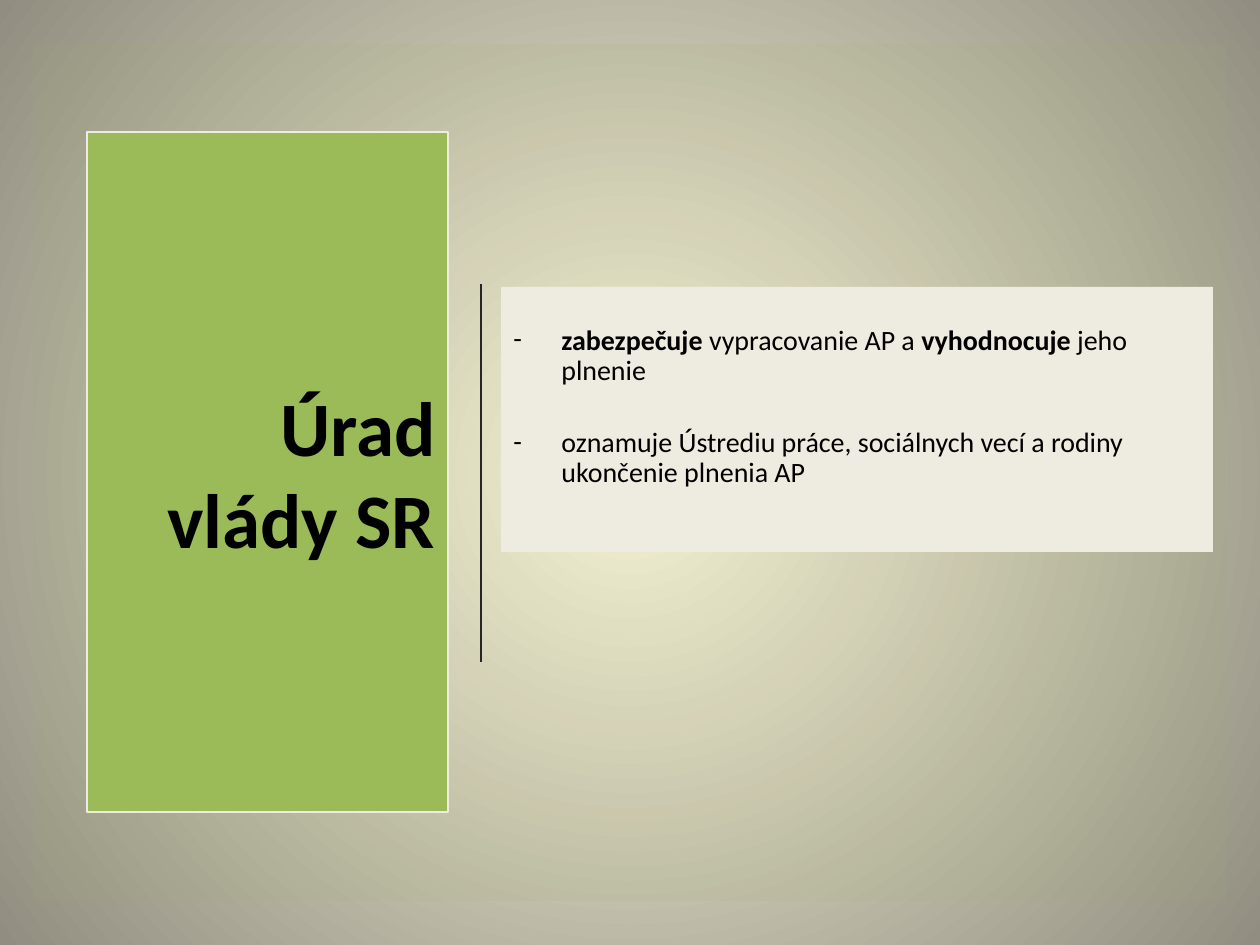
from lxml.etree import SubElement
from pptx import Presentation
from pptx.dml.color import RGBColor
from pptx.enum.shapes import MSO_CONNECTOR, MSO_SHAPE
from pptx.enum.text import MSO_ANCHOR, PP_ALIGN
from pptx.oxml.ns import qn
from pptx.util import Pt

SCALE = 914400 / 126
COLORS = {
    "center": "FCF7DD",
    "edge": "918E81",
    "green": "9BBB59",
    "cream": "EEECE1",
    "rule": "262626",
    "text": "000000",
}
DUTIES = [
    [("zabezpečuje ", True), ("vypracovanie AP a ", False),
     ("vyhodnocuje", True), (" jeho plnenie", False)],
    [("oznamuje Ústrediu práce, sociálnych vecí a rodiny ukončenie plnenia AP", False)],
]


def px(num):
    return round(num * SCALE)


def color(name):
    return RGBColor.from_string(COLORS[name])


def style(item, values):
    for name, value in values.items():
        setattr(item, name, value)


def add_glow(slide):
    fill = slide.background.fill
    fill.gradient()
    for stop, name, place in zip(fill.gradient_stops, ("center", "edge"), (0, 1)):
        stop.color.rgb = color(name)
        stop.position = place
    grad = slide.background._cSld.find(".//" + qn("a:gradFill"))
    grad.remove(grad.find(qn("a:lin")))
    shade = SubElement(grad, qn("a:path"), {"path": "circle"})
    SubElement(shade, qn("a:fillToRect"), dict.fromkeys("ltrb", "50000"))


def add_panel(slide, box, fill, line=None, alpha=None):
    shape = slide.shapes.add_shape(MSO_SHAPE.RECTANGLE, *map(px, box))
    shape.shadow.inherit = False
    shape.fill.solid()
    shape.fill.fore_color.rgb = color(fill)
    if alpha:
        tint = shape._element.spPr.find(".//" + qn("a:srgbClr"))
        SubElement(tint, qn("a:alpha"), {"val": str(alpha * 1000)})
    if line:
        shape.line.color.rgb = color(line)
        shape.line.width = Pt(0.75)
    else:
        shape.line.fill.background()
    return shape


def add_rule(slide, x, top, end):
    rule = slide.shapes.add_connector(
        MSO_CONNECTOR.STRAIGHT, px(x), px(top), px(x), px(end))
    rule.line.color.rgb = color("rule")
    rule.line.width = Pt(1.5)
    SubElement(rule._element.spPr, qn("a:effectLst"))


def add_run(para, text, size, bold):
    run = para.add_run()
    run.text = text
    style(run.font, {"name": "Calibri", "size": Pt(size), "bold": bold})
    run.font.color.rgb = color("text")


def add_title(shape, text):
    frame = shape.text_frame
    style(frame, {"word_wrap": True, "vertical_anchor": MSO_ANCHOR.MIDDLE})
    para = frame.paragraphs[0]
    para.alignment = PP_ALIGN.RIGHT
    add_run(para, text, 44, True)


def add_list(shape, items):
    frame = shape.text_frame
    style(frame, {"word_wrap": True, "vertical_anchor": MSO_ANCHOR.TOP,
                  "margin_top": px(39)})
    for index, runs in enumerate(items):
        para = frame.add_paragraph() if index else frame.paragraphs[0]
        style(para, {"alignment": PP_ALIGN.LEFT, "line_spacing": 0.9,
                     "space_before": Pt(24 if index else 0)})
        props = para._p.get_or_add_pPr()
        props.set("marL", str(px(48)))
        props.set("indent", str(px(-48)))
        SubElement(props, qn("a:buFont"), {"typeface": "Calibri"})
        SubElement(props, qn("a:buChar"), {"char": "-"})
        for text, bold in runs:
            add_run(para, text, 16, bold)


def main():
    deck = Presentation()
    style(deck, {"slide_width": px(1260), "slide_height": px(945)})
    slide = deck.slides.add_slide(deck.slide_layouts[6])
    add_glow(slide)
    add_panel(slide, (33, 44, 1193, 857), "green", alpha=8)
    add_rule(slide, 481, 284, 662)
    title = add_panel(slide, (87, 132, 361, 680), "green", line="cream")
    add_title(title, "Úrad vlády SR")
    body = add_panel(slide, (501, 287, 712, 265), "cream")
    add_list(body, DUTIES)
    deck.save("out.pptx")


if __name__ == "__main__":
    main()
